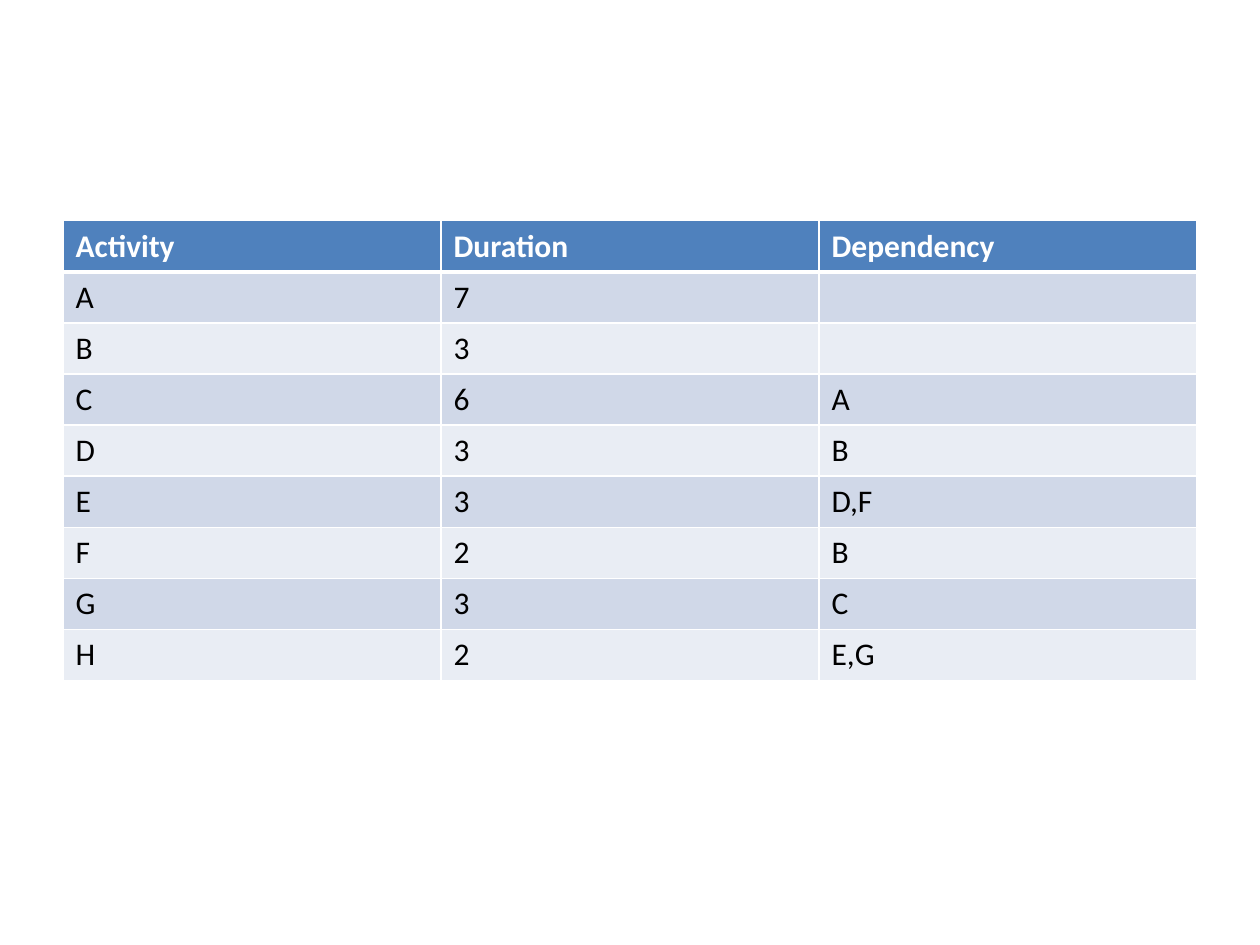
from dataclasses import dataclass

from lxml import etree
from pptx import Presentation
from pptx import util as u
from pptx.dml.color import RGBColor
from pptx.oxml import ns

WHITE = "FFFFFF"
HEADINGS = ("Activity", "Duration", "Dependency")
COLUMN_WIDTH = u.Cm(7.62)
ROW_HEIGHT = u.Cm(1.03)
THIN, THICK = u.Pt(1), u.Pt(3)


@dataclass(frozen=True)
class Activity:
    name: str
    duration: int
    dependency: str = ""


@dataclass(frozen=True)
class CellStyle:
    fill: str
    color: str
    bold: bool = False
    top: int = THIN
    bottom: int = THIN


ACTIVITIES = (
    Activity("A", 7),
    Activity("B", 3),
    Activity("C", 6, "A"),
    Activity("D", 3, "B"),
    Activity("E", 3, "D,F"),
    Activity("F", 2, "B"),
    Activity("G", 3, "C"),
    Activity("H", 2, "E,G"),
)


def rgb(value: str) -> RGBColor:
    return RGBColor.from_string(value)


def row_style(index: int) -> CellStyle:
    """Header first, then alternating bands."""
    if index == 0:
        return CellStyle("4F81BD", WHITE, bold=True, bottom=THICK)
    band = "D0D8E8" if index % 2 else "E9EDF4"
    return CellStyle(band, "000000", top=THICK if index == 1 else THIN)


def set_borders(cell, style: CellStyle) -> None:
    properties = cell._tc.get_or_add_tcPr()
    widths = {"lnL": THIN, "lnR": THIN, "lnT": style.top, "lnB": style.bottom}
    for side, width in widths.items():
        line = etree.SubElement(properties, ns.qn(f"a:{side}"), w=str(int(width)))
        fill = etree.SubElement(line, ns.qn("a:solidFill"))
        etree.SubElement(fill, ns.qn("a:srgbClr"), val=WHITE)


def fill_cell(cell, content: str, style: CellStyle) -> None:
    set_borders(cell, style)
    cell.fill.solid()
    cell.fill.fore_color.rgb = rgb(style.fill)
    if not content:
        return
    run = cell.text_frame.paragraphs[0].add_run()
    run.text = content
    run.font.name = "Calibri"
    run.font.size = u.Pt(18)
    run.font.bold = style.bold
    run.font.color.rgb = rgb(style.color)


def add_activity_table(slide, activities: tuple[Activity, ...]) -> None:
    rows = [HEADINGS] + [(a.name, str(a.duration), a.dependency) for a in activities]
    table = slide.shapes.add_table(
        len(rows), len(HEADINGS), u.Cm(1.27), u.Cm(4.45),
        COLUMN_WIDTH * len(HEADINGS), ROW_HEIGHT * len(rows),
    ).table
    for column in table.columns:
        column.width = COLUMN_WIDTH
    for index, contents in enumerate(rows):
        table.rows[index].height = ROW_HEIGHT
        for cell, content in zip(table.rows[index].cells, contents):
            fill_cell(cell, content, row_style(index))


def main() -> None:
    # Slide
    presentation = Presentation()
    presentation.slide_width = u.Cm(25.4)
    presentation.slide_height = u.Cm(19.05)
    slide = presentation.slides.add_slide(presentation.slide_layouts[6])

    # Activity table
    add_activity_table(slide, ACTIVITIES)
    presentation.save("out.pptx")


if __name__ == "__main__":
    main()
